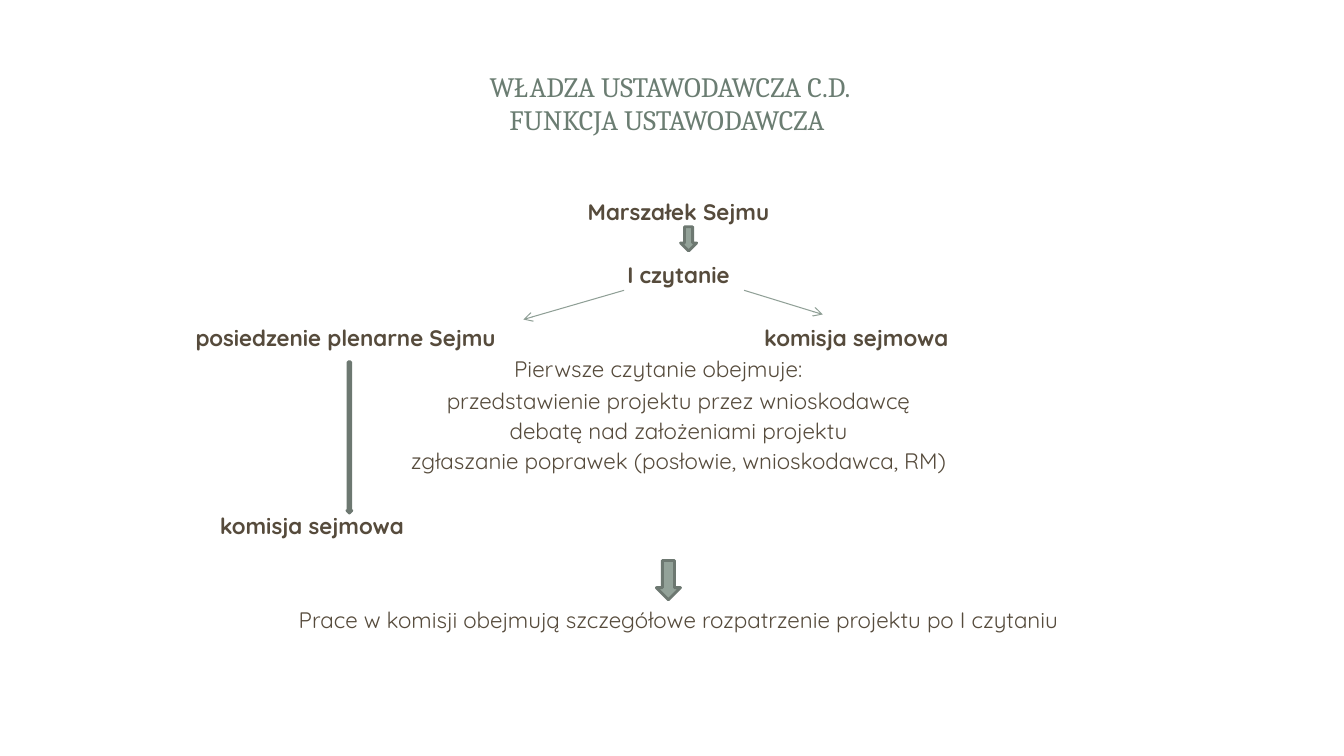
import dataclasses

import lxml.etree
import pptx
import pptx.dml.color
import pptx.enum.shapes
import pptx.enum.text
import pptx.oxml.ns
import pptx.util

Inches = pptx.util.Inches
Pt = pptx.util.Pt
Align = pptx.enum.text.PP_ALIGN
Anchor = pptx.enum.text.MSO_ANCHOR


@dataclasses.dataclass(frozen=True)
class Theme:
    title_font: str = "Cambria"
    body_font: str = "Quicksand"
    title_size: int = 20
    body_size: int = 16
    title_color: str = "6B7D72"
    body_color: str = "564B3C"
    arrow_fill: str = "93A299"
    arrow_line: str = "6D7871"
    branch_line: str = "8F9F96"


def rgb(value):
    return pptx.dml.color.RGBColor.from_string(value)


class ProcessSlide:
    """Draws the legislative process on one slide in one theme."""

    TOP = 1.97
    ROW = 22.4 / 72
    LINE_GAP = 2.4

    def __init__(self, prs, theme):
        self.theme = theme
        self.s = prs.slides.add_slide(prs.slide_layouts[6])

    def frame(self, left, top, width, height):
        tf = self.s.shapes.add_textbox(
            Inches(left), Inches(top), Inches(width), Inches(height)).text_frame
        tf.word_wrap = True
        tf.margin_left = tf.margin_right = tf.margin_top = tf.margin_bottom = 0
        return tf

    def run(self, p, text, font, size, color, bold=False):
        r = p.add_run()
        r.text = text
        r.font.name = font
        r.font.size = Pt(size)
        r.font.bold = bold
        r.font.color.rgb = rgb(color)

    def title(self, lines):
        t = self.theme
        tf = self.frame(0.62, 0.45, 12.05, 1.14)
        tf.vertical_anchor = Anchor.MIDDLE
        p = tf.paragraphs[0]
        p.alignment = Align.CENTER
        for i, line in enumerate(lines):
            if i:
                p.add_line_break()
            self.run(p, line, t.title_font, t.title_size, t.title_color)

    def text(self, row, lines, bold=False, left=0.73, width=12, align=Align.CENTER):
        t = self.theme
        tf = self.frame(left, self.TOP + row * self.ROW, width, len(lines) * self.ROW)
        for i, line in enumerate(lines):
            p = tf.add_paragraph() if i else tf.paragraphs[0]
            p.alignment = align
            p.space_after = Pt(self.LINE_GAP)
            self.run(p, line, t.body_font, t.body_size, t.body_color, bold)

    def label(self, row, left, text, bold=True):
        self.text(row, [text], bold, left, 3.5, Align.LEFT)

    def down_arrow(self, left, top, width, height):
        sp = self.s.shapes.add_shape(
            pptx.enum.shapes.MSO_SHAPE.DOWN_ARROW,
            Inches(left), Inches(top), Inches(width), Inches(height))
        sp.shadow.inherit = False
        sp.fill.solid()
        sp.fill.fore_color.rgb = rgb(self.theme.arrow_fill)
        sp.line.color.rgb = rgb(self.theme.arrow_line)
        sp.line.width = Pt(2)

    def branch(self, x1, y1, x2, y2):
        cxn = self.s.shapes.add_connector(
            pptx.enum.shapes.MSO_CONNECTOR.STRAIGHT,
            Inches(x1), Inches(y1), Inches(x2), Inches(y2))
        cxn.line.color.rgb = rgb(self.theme.branch_line)
        cxn.line.width = Pt(0.75)
        qn = pptx.oxml.ns.qn
        lxml.etree.SubElement(cxn.line._get_or_add_ln(), qn("a:tailEnd"), type="arrow")
        lxml.etree.SubElement(cxn._element.spPr, qn("a:effectLst"))


def main():
    prs = pptx.Presentation()
    prs.slide_width, prs.slide_height = Inches(13.33), Inches(7.5)
    slide = ProcessSlide(prs, Theme())

    slide.title(["WŁADZA USTAWODAWCZA C.D.", "FUNKCJA USTAWODAWCZA "])
    slide.text(0, ["Marszałek Sejmu"], bold=True)
    slide.text(2, ["I czytanie"], bold=True)
    slide.label(4, 1.94, "posiedzenie plenarne Sejmu")
    slide.label(4, 7.58, "komisja sejmowa")
    slide.label(5, 5.1, "Pierwsze czytanie obejmuje:", bold=False)
    slide.text(6, [
        "przedstawienie projektu przez wnioskodawcę",
        "debatę nad założeniami projektu",
        "zgłaszanie poprawek (posłowie, wnioskodawca, RM)",
    ])
    slide.label(10, 2.18, "komisja sejmowa")
    slide.text(13, [
        "Prace w komisji obejmują szczegółowe rozpatrzenie projektu po I czytaniu"])

    slide.down_arrow(6.75, 2.25, 0.16, 0.24)
    slide.branch(6.19, 2.88, 5.19, 3.17)
    slide.branch(7.38, 2.88, 8.16, 3.12)
    slide.down_arrow(3.44, 3.59, 0.05, 1.5)
    slide.down_arrow(6.51, 5.56, 0.24, 0.39)
    prs.save("out.pptx")


if __name__ == "__main__":
    main()
